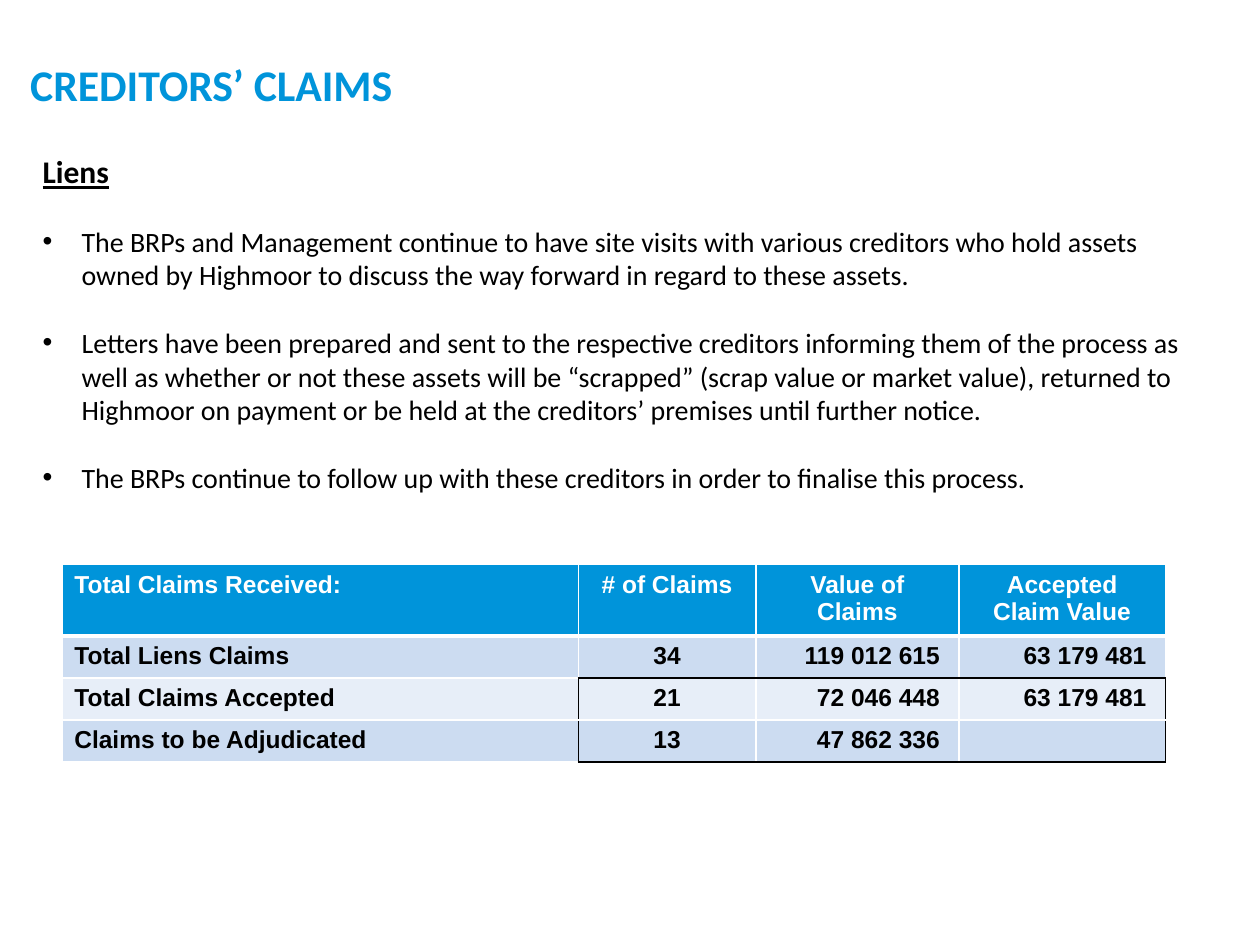
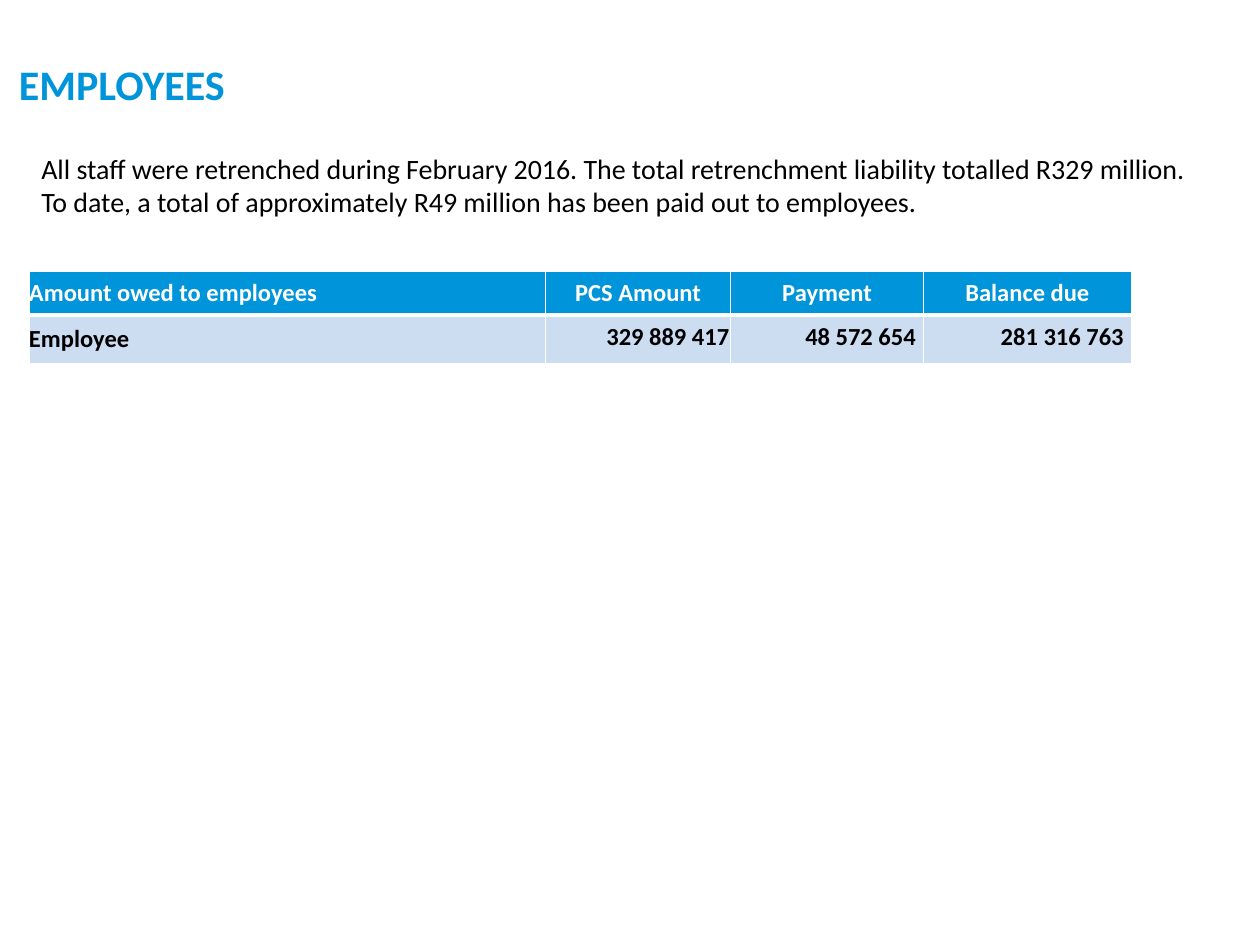
from lxml.etree import SubElement
from pptx import Presentation
from pptx.dml.color import RGBColor
from pptx.enum.text import MSO_ANCHOR as Anchor, PP_ALIGN as Align
from pptx.oxml import parse_xml
from pptx.oxml.ns import nsdecls, qn
from pptx.util import Inches, Pt

BLUE, WHITE, BLACK = "0094DA", "FFFFFF", "000000"
BANDS = ["CCDCF1", "E7EEF8"]
BODY_FONT = "Calibri"
CELL_MARGINS = (0.1, 0.05, 0.1, 0.05)


def colour(value):
    return RGBColor.from_string(value)


def set_margins(target, margins):
    left, top, right, bottom = map(Inches, margins)
    target.margin_left, target.margin_top = left, top
    target.margin_right, target.margin_bottom = right, bottom


def add_bullet(para):
    properties = para._p.get_or_add_pPr()
    properties.set("marL", str(Inches(0.31)))
    properties.set("indent", str(-Inches(0.31)))
    SubElement(properties, qn("a:buFont")).set("typeface", "Arial")
    SubElement(properties, qn("a:buChar")).set("char", "•")


def write(para, text, size=16, font=BODY_FONT, fill=BLACK, bold=False,
          underline=False, align=Align.LEFT, bullet=False, before=0):
    if bullet:
        add_bullet(para)
    para.alignment = align
    para.space_before = Pt(before)
    if not text:
        SubElement(para._p, qn("a:endParaRPr")).set("sz", str(size * 100))
        return
    span = para.add_run()
    span.text = text
    span.font.size = Pt(size)
    span.font.name = font
    span.font.bold = bold
    span.font.underline = underline
    span.font.color.rgb = colour(fill)


def add_box(page, left, top, width, height):
    box = page.shapes.add_textbox(*map(Inches, (left, top, width, height)))
    box.text_frame.word_wrap = True
    return box.text_frame


def add_title(page, text, left, width, size):
    frame = add_box(page, left, 0.39, width, 0.55)
    set_margins(frame, (0, 0, 0, 0))
    frame.vertical_anchor = Anchor.MIDDLE
    write(frame.paragraphs[0], text, size=size, fill=BLUE, bold=True)


def add_body(page, left, top, width, height, items):
    frame = add_box(page, left, top, width, height)
    for index, (text, style) in enumerate(items):
        para = frame.add_paragraph() if index else frame.paragraphs[0]
        write(para, text, **style)


def draw_borders(cell, row, column, frame):
    top, left, bottom, right = frame or (-1, -1, -1, -1)
    properties = cell._tc.get_or_add_tcPr()
    edges = [("L", column, None), ("R", column + 1, None),
             ("T", None, row), ("B", None, row + 1)]
    for index, (side, x, y) in enumerate(edges):
        if y is None:
            framed = x in (left, right) and top <= row < bottom
        else:
            framed = y in (top, bottom) and left <= column < right
        line = BLACK if framed else WHITE
        width = Pt(3 if y == 1 else 1)
        properties.insert(index, parse_xml(
            f'<a:ln{side} {nsdecls("a")} w="{width}"><a:solidFill>'
            f'<a:srgbClr val="{line}"/></a:solidFill></a:ln{side}>'))


def add_table(page, left, top, widths, heights, rows, font,
              margins_for, anchor=Anchor.TOP, frame=None):
    shape = page.shapes.add_table(
        len(rows), len(widths), Inches(left), Inches(top),
        Inches(sum(widths)), Inches(sum(heights)))
    table = shape.table
    for column, width in zip(table.columns, widths):
        column.width = Inches(width)
    for row, height in zip(table.rows, heights):
        row.height = Inches(height)
    for r, values in enumerate(rows):
        for c, text in enumerate(values):
            cell = table.cell(r, c)
            numeric = r > 0 and c > 0
            align = Align.LEFT if c == 0 else Align.CENTER
            margins = margins_for(numeric, c)
            if numeric and " " in text:
                align = Align.RIGHT
            set_margins(cell, margins)
            cell.vertical_anchor = anchor
            cell.fill.solid()
            cell.fill.fore_color.rgb = colour(BANDS[(r - 1) % 2] if r else BLUE)
            draw_borders(cell, r, c, frame)
            write(cell.text_frame.paragraphs[0], text, size=14, font=font,
                  fill=BLACK if r else WHITE, bold=True, align=align)


def claims_margins(numeric, column):
    return (0.1, 0.05, 0.15, 0.05) if numeric and column > 1 else CELL_MARGINS


def employee_margins(numeric, column):
    if not numeric:
        return 0, 0, 0, 0
    return 0.01, 0.01, 0.01 if column == 1 else 0.06, 0.05


def build_claims(page):
    add_title(page, "CREDITORS’ CLAIMS", 0.24, 7.37, 25)
    point = dict(bullet=True, before=19.5)
    add_body(page, 0.24, 1.16, 9.26, 2.83, [
        ("Liens", dict(size=18, bold=True, underline=True)),
        ("The BRPs and Management continue to have site visits with various "
         "creditors who hold assets owned by Highmoor to discuss the way "
         "forward in regard to these assets.", point),
        ("Letters have been prepared and sent to the respective creditors "
         "informing them of the process as well as whether or not these "
         "assets will be “scrapped” (scrap value or market value), returned "
         "to Highmoor on payment or be held at the creditors’ premises until "
         "further notice.", point),
        ("The BRPs continue to follow up with these creditors in order to "
         "finalise this process.", point),
    ])
    add_table(page, 0.49, 4.48, [4.1, 1.41, 1.61, 1.64],
              [0.56, 0.33, 0.33, 0.33], [
        ["Total Claims Received:", "# of Claims", "Value of Claims",
         "Accepted Claim Value"],
        ["Total Liens Claims", "34", "119 012 615", "63 179 481"],
        ["Total Claims Accepted", "21", "72 046 448", "63 179 481"],
        ["Claims to be Adjudicated", "13", "47 862 336", ""],
    ], "Arial", claims_margins, frame=(2, 1, 4, 4))


def build_employees(page):
    add_title(page, "EMPLOYEES", 0.15, 7.68, 24)
    add_body(page, 0.23, 1.15, 9.46, 2.52, [
        ("All staff were retrenched during February 2016. The total "
         "retrenchment liability totalled R329 million.", {}),
        ("To date, a total of approximately R49 million has been paid out "
         "to employees.", {}),
    ])
    add_table(page, 0.23, 2.15, [4.1, 1.47, 1.53, 1.65], [0.35, 0.39], [
        ["Amount owed to employees", "PCS Amount", "Payment", "Balance due"],
        ["Employee", "329 889 417", "48 572 654", "281 316 763"],
    ], BODY_FONT, employee_margins, anchor=Anchor.MIDDLE)


def main():
    deck = Presentation()
    deck.slide_width, deck.slide_height = Inches(10), Inches(7.5)
    for build in (build_claims, build_employees):
        build(deck.slides.add_slide(deck.slide_layouts[6]))
    deck.save("out.pptx")


if __name__ == "__main__":
    main()
